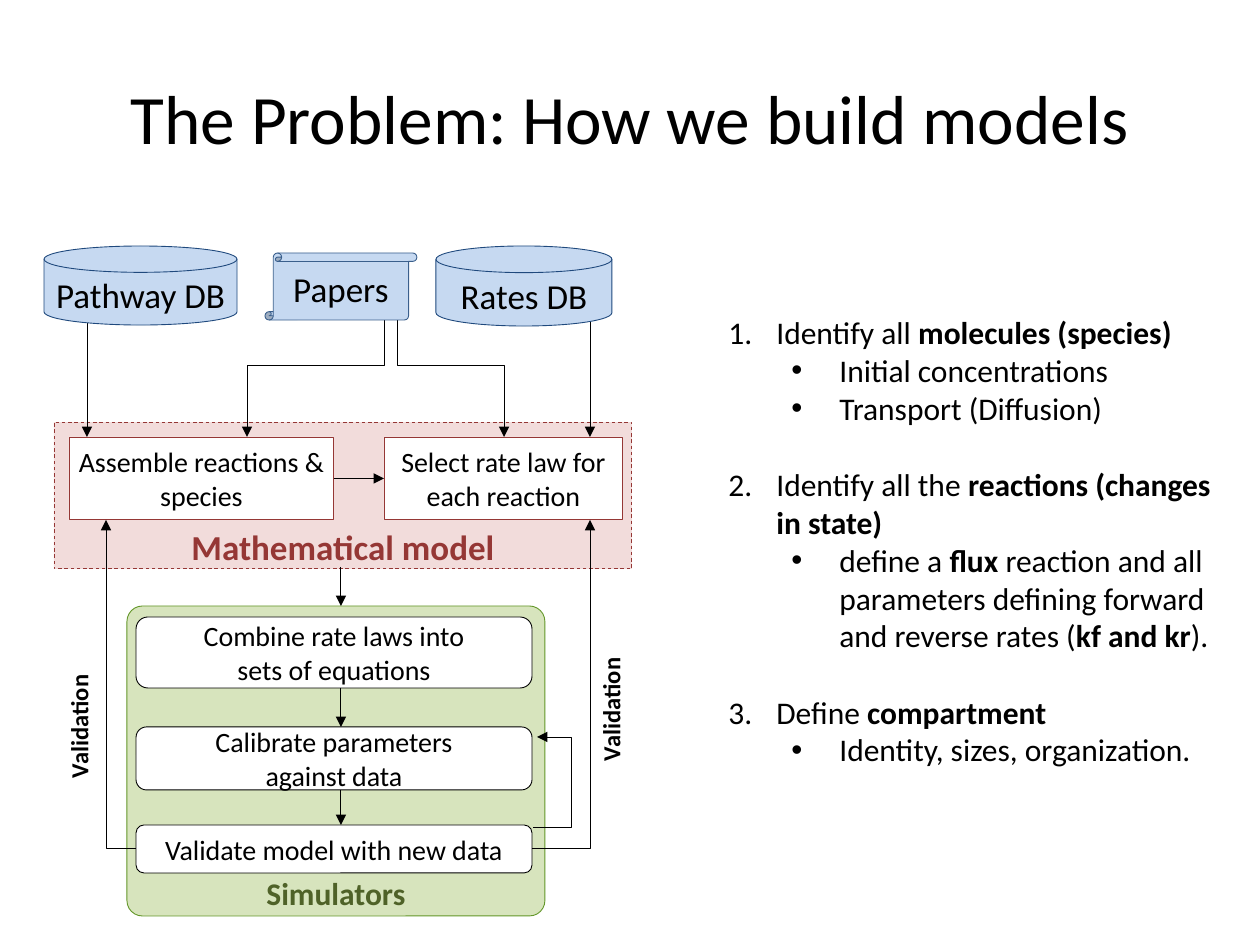
import pptx
import pptx.util
import pptx.dml.color
import pptx.enum.dml
import pptx.enum.shapes
import pptx.enum.text
import pptx.oxml
import pptx.oxml.ns
from lxml import etree

SHAPE = pptx.enum.shapes.MSO_SHAPE
CONNECTOR = pptx.enum.shapes.MSO_CONNECTOR
ANCHOR = pptx.enum.text.MSO_ANCHOR
ALIGN = pptx.enum.text.PP_ALIGN
Pt = pptx.util.Pt
qn = pptx.oxml.ns.qn

PX = 914400 // 126
THEME = {
    "font": "Calibri", "black": "000000", "white": "FFFFFF",
    "green": "D7E4BD", "green_line": "639729", "green_text": "4F6228",
    "pink": "F2DCDB", "red": "953735",
    "blue": "C6D9F1", "navy": "1F497D", "scroll_line": "3A5F8C",
    "title": 39.6, "source": 20, "model": 20, "simulators": 18,
    "step": 16, "validation": 14, "list": 18, "line": 0.5,
}

TITLE = ("The Problem: How we build models", (63, 38, 1134, 158))

# kind, box, lines, fill, line, text colour, size, bold, anchor, insets
CONTAINERS = [
    (SHAPE.ROUNDED_RECTANGLE, (127, 606, 418, 310), ["Simulators"],
     "green", "green_line", "green_text", "simulators", True, ANCHOR.BOTTOM, (6, 0, 6, 0)),
    (SHAPE.RECTANGLE, (54, 422, 578, 147), ["Mathematical model"],
     "pink", "red", "red", "model", True, ANCHOR.BOTTOM, (13, 1, 13, 1)),
]
MODEL_STEPS = [
    ("Assemble reactions & species", 69, 265),
    ("Select rate law for each reaction", 384, 239),
]
SIMULATOR_STEPS = [
    (["Combine rate laws into", "sets of equations"], 617, 71),
    (["Calibrate parameters", "against data"], 727, 63),
    (["Validate model with new data"], 825, 48),
]
SOURCES = [
    (SHAPE.FLOWCHART_MAGNETIC_DISK, (44, 246, 193, 79), "Pathway DB", "navy", 1),
    (SHAPE.VERTICAL_SCROLL, (265, 253, 152, 67), "Papers", "scroll_line", 6),
    (SHAPE.FLOWCHART_MAGNETIC_DISK, (436, 246, 176, 80), "Rates DB", "navy", 1),
]
STRAIGHT_ARROWS = [
    ((87, 321), (87, 437)), ((590, 295), (590, 437)),
    ((341, 567), (341, 606)), ((341, 688), (341, 727)), ((341, 790), (341, 825)),
]
PAPER_ARROWS = [((397, 295), (504, 437)), ((384, 295), (247, 437))]
VALIDATION_ARROWS = [((532, 849), (590, 520)), ((136, 849), (106, 520))]
RECALIBRATION = ((533, 828), (537, 737), 571)
VALIDATION_LABELS = [(596, 656, 30, 105), (64, 673, 30, 105)]

LIST_BOX = (716, 307, 514, 471)
TASKS = [
    ([("Identify all ", False), ("molecules (species)", True)],
     [[("Initial concentrations", False)], [("Transport (Diffusion)", False)]]),
    ([("Identify all the ", False), ("reactions (changes in state)", True)],
     [[("define a ", False), ("flux ", True),
       ("reaction and all parameters defining forward and reverse rates (", False),
       ("kf and kr", True), (").", False)]]),
    ([("Define ", False), ("compartment", True)],
     [[("Identity, sizes, organization.", False)]]),
]


def px(*values):
    return [round(value * PX) for value in values]


def rgb(name):
    return pptx.dml.color.RGBColor.from_string(THEME[name])


def style(font, size, colour="black", bold=None):
    font.name = THEME["font"]
    font.size = Pt(THEME[size])
    font.color.rgb = rgb(colour)
    font.bold = bold


def write(frame, lines, size, colour="black", bold=False, anchor=ANCHOR.MIDDLE,
          insets=(6, 6, 6, 6), align=ALIGN.CENTER, wrap=True):
    frame.word_wrap = wrap
    frame.vertical_anchor = anchor
    (frame.margin_left, frame.margin_top,
     frame.margin_right, frame.margin_bottom) = px(*insets)
    for index, line in enumerate(lines):
        paragraph = frame.add_paragraph() if index else frame.paragraphs[0]
        paragraph.text = line
        paragraph.alignment = align
        style(paragraph.font, size, colour, bold)


def add_box(shapes, kind, box, lines, fill, line, colour="black", size="step",
            bold=False, anchor=ANCHOR.MIDDLE, insets=(6, 6, 6, 6)):
    shape = shapes.add_shape(kind, *px(*box))
    shape.shadow.inherit = False
    shape.fill.solid()
    shape.fill.fore_color.rgb = rgb(fill)
    shape.line.color.rgb = rgb(line)
    shape.line.width = Pt(THEME["line"])
    write(shape.text_frame, lines, size, colour, bold, anchor, insets)
    return shape


def add_arrow(shapes, start, end, kind=CONNECTOR.STRAIGHT):
    arrow = shapes.add_connector(kind, *px(*start, *end))
    arrow.line.color.rgb = rgb("black")
    arrow.line.width = Pt(THEME["line"])
    line = arrow.line._get_or_add_ln()
    etree.SubElement(line, qn("a:tailEnd"), type="triangle", w="med", len="med")
    etree.SubElement(arrow._element.spPr, qn("a:effectLst"))
    return arrow


def add_down_elbow(shapes, start, end):
    (x1, y1), (x2, y2) = start, end
    middle_x, middle_y = (x1 + x2) / 2, (y1 + y2) / 2
    half_width, half_height = (y2 - y1) / 2, abs(x2 - x1) / 2
    side = 1 if x2 > x1 else -1
    arrow = add_arrow(shapes, (middle_x + side * half_width, middle_y - half_height),
                      (middle_x - side * half_width, middle_y + half_height), CONNECTOR.ELBOW)
    arrow._element.spPr.find(qn("a:xfrm")).set("rot", str((180 + side * 90) * 60000))


def add_list(shapes):
    frame = shapes.add_textbox(*px(*LIST_BOX)).text_frame
    frame.word_wrap = True
    paragraph = frame.paragraphs[0]
    for number, (task, details) in enumerate(TASKS, 1):
        for level, runs in [(0, task)] + [(1, detail) for detail in details]:
            if number > 1 or level:
                paragraph = frame.add_paragraph()
            paragraph.level = level
            properties = paragraph._p.get_or_add_pPr()
            properties.set("marL", str(px((48, 111)[level])[0]))
            properties.set("indent", str(px(-48)[0]))
            if level:
                etree.SubElement(properties, qn("a:buFont"), typeface="Arial")
                etree.SubElement(properties, qn("a:buChar"), char="•")
            else:
                etree.SubElement(properties, qn("a:buFont"), typeface="+mj-lt")
                etree.SubElement(properties, qn("a:buAutoNum"),
                                 type="arabicPeriod", startAt=str(number))
                if number > 1:
                    paragraph.space_before = Pt(22)
            style(paragraph.font, "list")
            for words, bold in runs:
                run = paragraph.add_run()
                run.text = words
                run.font.bold = bold


def main():
    deck = pptx.Presentation()
    deck.slide_width, deck.slide_height = px(1260, 945)
    shapes = deck.slides.add_slide(deck.slide_layouts[6]).shapes

    heading, heading_box = TITLE
    write(shapes.add_textbox(*px(*heading_box)).text_frame, [heading], "title")

    simulators, model = [add_box(shapes, *container) for container in CONTAINERS]
    simulators.adjustments[0] = 0.05
    model.line.dash_style = pptx.enum.dml.MSO_LINE.DASH

    assemble, select = [
        add_box(shapes, SHAPE.RECTANGLE, (left, 437, width, 83), [step], "white", "red")
        for step, left, width in MODEL_STEPS]
    for lines, top, height in SIMULATOR_STEPS:
        add_box(shapes, SHAPE.ROUNDED_RECTANGLE, (136, top, 396, height), lines, "white", "black")

    for start, end in STRAIGHT_ARROWS:
        add_arrow(shapes, start, end)
    model_flow = add_arrow(shapes, (334, 478), (384, 478))
    model_flow.begin_connect(assemble, 3)
    model_flow.end_connect(select, 1)
    for start, end in PAPER_ARROWS:
        add_down_elbow(shapes, start, end)
    for start, end in VALIDATION_ARROWS:
        feedback = add_arrow(shapes, start, end, CONNECTOR.ELBOW)
        feedback._element.spPr.find(qn("a:prstGeom")).set("prst", "bentConnector2")
    start, end, turn = RECALIBRATION
    loop = add_arrow(shapes, start, end, CONNECTOR.ELBOW)
    reach = round((turn - start[0]) / (end[0] - start[0]) * 100000)
    etree.SubElement(loop._element.spPr.find(qn("a:prstGeom")).find(qn("a:avLst")),
                     qn("a:gd"), name="adj1", fmla=f"val {reach}")

    for box in VALIDATION_LABELS:
        label = shapes.add_textbox(*px(*box)).text_frame
        write(label, ["Validation"], "validation", bold=True, anchor=ANCHOR.TOP,
              insets=(0, 0, 0, 0), align=ALIGN.LEFT, wrap=False)
        label._txBody.bodyPr.set("vert", "vert270")
    for kind, box, source, line, bottom in SOURCES:
        add_box(shapes, kind, box, [source], "blue", line, size="source",
                insets=(6, 6, 6, bottom))

    add_list(shapes)
    deck.save("out.pptx")


if __name__ == "__main__":
    main()
